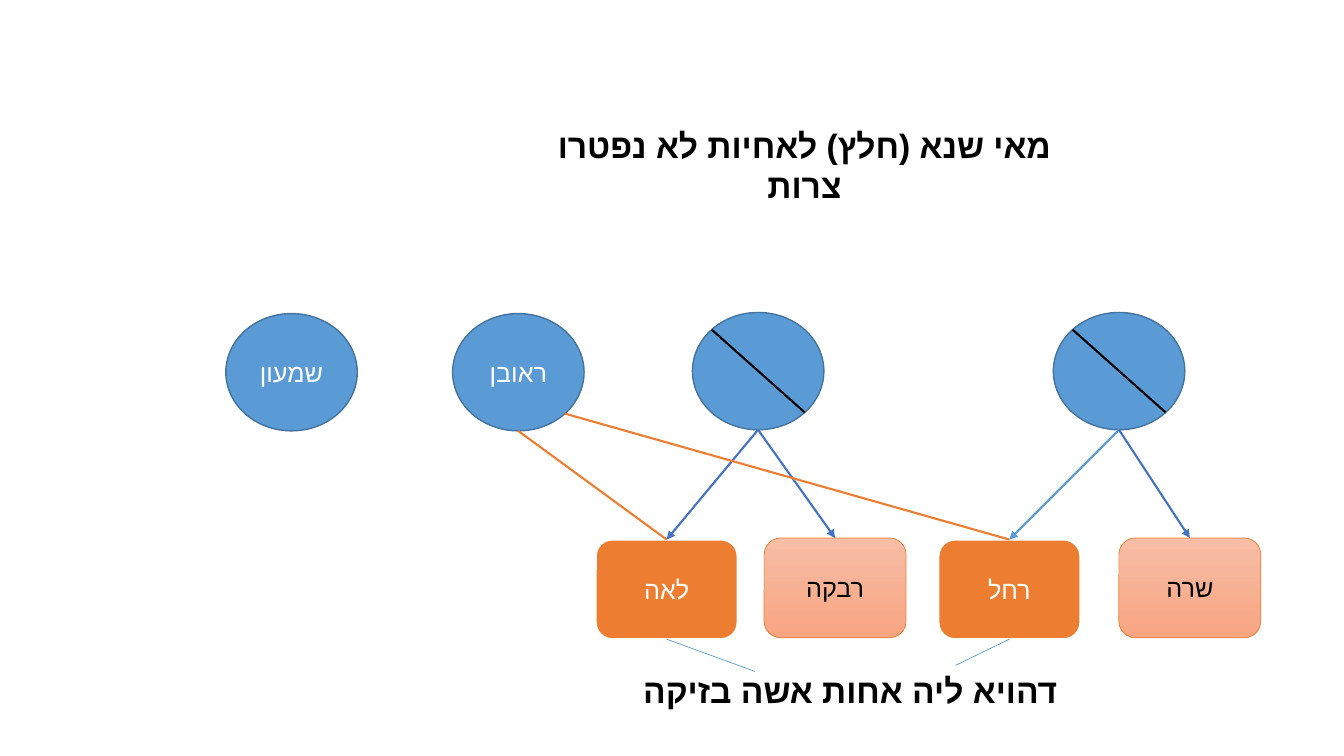
from lxml.etree import SubElement
from pptx import Presentation
from pptx.dml.color import RGBColor
from pptx.enum.shapes import MSO_CONNECTOR as Link, MSO_SHAPE as Preset
from pptx.enum.text import MSO_ANCHOR as Anchor, MSO_AUTO_SIZE as AutoSize, PP_ALIGN as Align
from pptx.oxml.ns import qn
from pptx.util import Pt

BLUE, NAVY, ORANGE = "5B9BD5", "4472C4", "ED7D31"
WHITE, BLACK = "FFFFFF", "000000"
BROTHER_W, BROTHER_H, WIFE_W, WIFE_H = 93.9, 83.8, 101.4, 71.2


def color(value):
    return RGBColor.from_string(value)


class FamilyDiagram:
    """Draws brothers, wives, links and captions on one slide."""

    font = "Arial"

    def __init__(self, page):
        self.shapes = page.shapes

    def label(self, frame, text, size, ink, bold=False):
        frame.word_wrap = True
        frame.text = text
        para = frame.paragraphs[0]
        para.alignment = Align.CENTER
        para._p.get_or_add_pPr().set("rtl", "1")
        for span in para.runs:
            span.font.name = self.font
            span.font.size = Pt(size)
            span.font.bold = bold
            span.font.color.rgb = color(ink)
            SubElement(span._r.get_or_add_rPr(), qn("a:cs"), typeface=self.font)

    def node(self, preset, left, top, width, height, border, weight, parent=None):
        shapes = parent.shapes if parent else self.shapes
        box = shapes.add_shape(preset, Pt(left), Pt(top), Pt(width), Pt(height))
        box.shadow.inherit = False
        box.line.color.rgb = color(border)
        box.line.width = Pt(weight)
        box.text_frame.vertical_anchor = Anchor.MIDDLE
        return box

    def link(self, start, end, ink, weight=1.5, arrow=False, parent=None):
        shapes = parent.shapes if parent else self.shapes
        points = [Pt(value) for value in (*start, *end)]
        line = shapes.add_connector(Link.STRAIGHT, *points)
        line.line.color.rgb = color(ink)
        line.line.width = Pt(weight)
        properties = line._element.spPr
        if arrow:
            SubElement(properties.get_or_add_ln(), qn("a:tailEnd"), type="triangle")
        SubElement(properties, qn("a:effectLst"))

    def brother(self, left, top, name="", parent=None):
        circle = self.node(Preset.OVAL, left, top, BROTHER_W, BROTHER_H, "43739E", 1, parent)
        circle.fill.solid()
        circle.fill.fore_color.rgb = color(BLUE)
        if name:
            self.label(circle.text_frame, name, 18, WHITE)

    def deceased(self, left, top):
        group = self.shapes.add_group_shape()
        self.brother(left, top, parent=group)
        self.link((left + 13.8, top + 12.3), (left + 80.1, top + 71.3), BLACK, parent=group)

    def sister(self, left, name):
        box = self.node(Preset.ROUNDED_RECTANGLE, left, 385.4, WIFE_W, WIFE_H, WHITE, 1.5)
        box.fill.solid()
        box.fill.fore_color.rgb = color(ORANGE)
        self.label(box.text_frame, name, 18, WHITE)

    def rival(self, left, name):
        box = self.node(Preset.ROUNDED_RECTANGLE, left, 384.3, WIFE_W, WIFE_H, ORANGE, 0.5)
        box.fill.gradient()
        box.fill.gradient_angle = 270
        for stop, shade in zip(box.fill.gradient_stops, ("F7BDA5", "F8A582")):
            stop.color.rgb = color(shade)
        self.label(box.text_frame, name, 18, BLACK)

    def caption(self, left, top, width, text):
        box = self.shapes.add_textbox(Pt(left), Pt(top), Pt(width), Pt(36))
        self.label(box.text_frame, text, 24, BLACK, bold=True)
        box.text_frame.auto_size = AutoSize.SHAPE_TO_FIT_TEXT


def main():
    deck = Presentation()
    deck.slide_width, deck.slide_height = Pt(960), Pt(540)
    diagram = FamilyDiagram(deck.slides.add_slide(deck.slide_layouts[6]))

    for left, name in ((161.3, "שמעון"), (323.3, "ראובן")):
        diagram.brother(left, 224, name)
    for left in (494.6, 752.4):
        diagram.deceased(left, 223.2)
    for left, name in ((425.5, "לאה"), (670.3, "רחל")):
        diagram.sister(left, name)
    for left, name in ((545.8, "רבקה"), (799.2, "שרה")):
        diagram.rival(left, name)

    leah, rachel = (476.2, 385.4), (721, 385.4)
    marriages = (
        (541.5, leah, NAVY),
        (541.5, (596.5, 384.3), NAVY),
        (799.3, rachel, BLUE),
        (799.3, (849.9, 384.3), NAVY),
    )
    for husband, wife, ink in marriages:
        diagram.link((husband, 307), wife, ink, arrow=True)
    diagram.link((403.4, 295.4), rachel, ORANGE)
    diagram.link((370.2, 307.8), leah, ORANGE)
    diagram.link((721, 456.6), (682.6, 475.2), BLUE, 0.5)
    diagram.link((476.2, 456.6), (539.3, 479.6), BLUE, 0.5)

    diagram.caption(373.7, 85.7, 401.8, "מאי שנא (חלץ) לאחיות לא נפטרו צרות")
    diagram.caption(434.2, 475.2, 346.3, "דהויא ליה אחות אשה בזיקה")
    deck.save("out.pptx")


if __name__ == "__main__":
    main()
